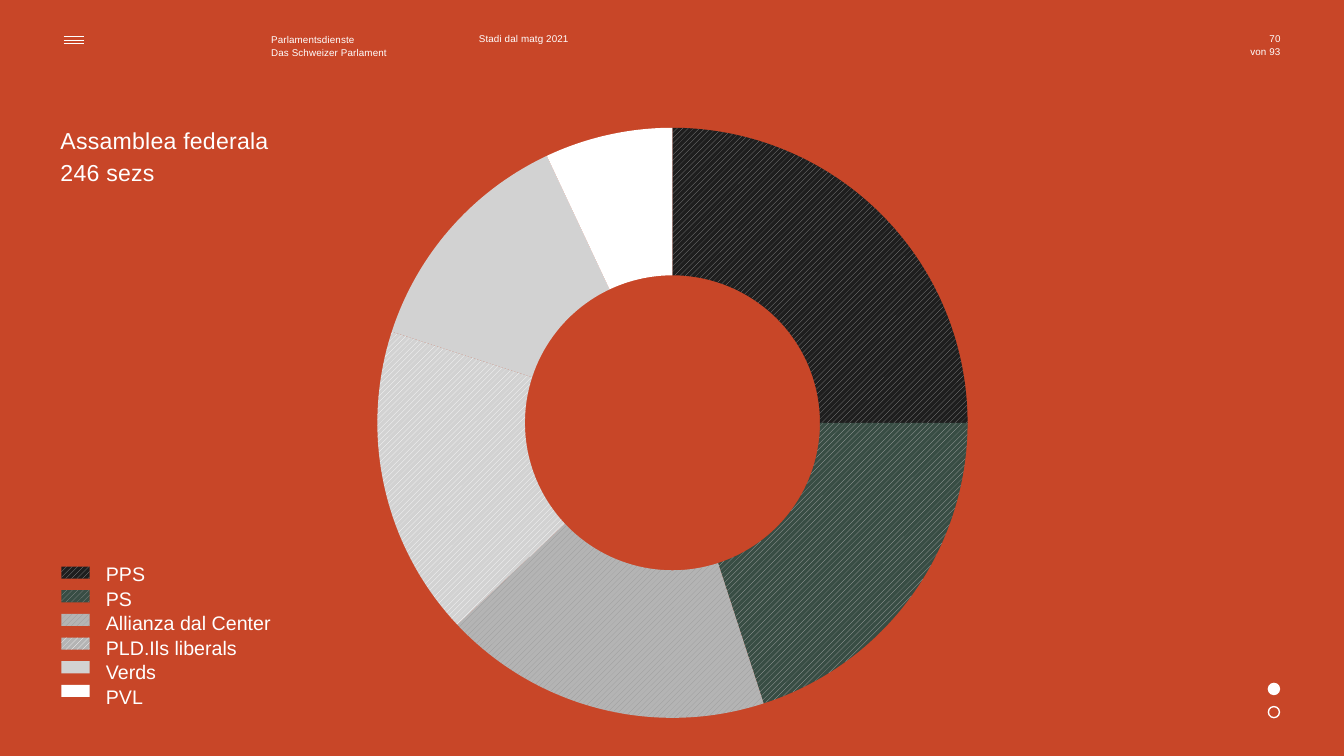
from pptx import Presentation
from pptx.chart.data import CategoryChartData
from pptx.dml.color import RGBColor
from pptx.enum.chart import XL_CHART_TYPE
from pptx.enum.dml import MSO_PATTERN
from pptx.enum.shapes import MSO_CONNECTOR, MSO_SHAPE
from pptx.enum.text import MSO_ANCHOR, MSO_AUTO_SIZE, PP_ALIGN
from pptx.oxml.ns import qn
from pptx.util import Inches, Pt
from lxml import etree

DOUGHNUT = XL_CHART_TYPE.DOUGHNUT
HATCH = MSO_PATTERN.WIDE_UPWARD_DIAGONAL
STRAIGHT = MSO_CONNECTOR.STRAIGHT
OVAL, RECTANGLE = MSO_SHAPE.OVAL, MSO_SHAPE.RECTANGLE
LEFT, RIGHT = PP_ALIGN.LEFT, PP_ALIGN.RIGHT
TOP = MSO_ANCHOR.TOP
NO_AUTOFIT = MSO_AUTO_SIZE.NONE

FONT = "Arial"
RED = RGBColor(0xC8, 0x46, 0x28)
WHITE = RGBColor(0xFF, 0xFF, 0xFF)
BLACK = RGBColor(0x00, 0x00, 0x00)
CHARCOAL = RGBColor(0x1E, 0x1E, 0x1E)
GREEN = RGBColor(0x38, 0x4D, 0x44)
DARK_GREY = RGBColor(0x96, 0x96, 0x96)
MID_GREY = RGBColor(0xB4, 0xB4, 0xB4)
LIGHT_GREY = RGBColor(0xD2, 0xD2, 0xD2)

# Party, share, (colour, hatch) in the ring, (colour, hatch) in the legend
PARTIES = [
    ("PPS", 25, (CHARCOAL, DARK_GREY), (CHARCOAL, DARK_GREY)),
    ("PS", 20, (GREEN, MID_GREY), (GREEN, DARK_GREY)),
    ("Allianza dal Center", 18, (MID_GREY, DARK_GREY), (MID_GREY, DARK_GREY)),
    ("PLD.Ils liberals", 17, (LIGHT_GREY, WHITE), (MID_GREY, WHITE)),
    ("Verds", 13, (LIGHT_GREY, None), (LIGHT_GREY, None)),
    ("PVL", 7, (WHITE, None), (WHITE, None)),
]


def paint(fill, colour, hatch):
    """Fill with a plain colour, or with diagonal hatching over it."""
    if hatch is None:
        fill.solid()
        fill.fore_color.rgb = colour
    else:
        fill.patterned()
        fill.pattern = HATCH
        fill.fore_color.rgb = hatch
        fill.back_color.rgb = colour


def write(frame, lines, size, tracking=0, align=LEFT, line_spacing=1.0):
    """Write one paragraph per line; tracking is in hundredths of a point."""
    frame.word_wrap = True
    frame.auto_size = NO_AUTOFIT
    frame.vertical_anchor = TOP
    frame.margin_left = frame.margin_right = 0
    frame.margin_top = frame.margin_bottom = 0
    for index, line in enumerate(lines):
        paragraph = frame.add_paragraph() if index else frame.paragraphs[0]
        paragraph.alignment = align
        paragraph.line_spacing = line_spacing
        paragraph.space_before = paragraph.space_after = Pt(0)
        run = paragraph.add_run()
        run.text = line
        run.font.name = FONT
        run.font.size = Pt(size)
        run.font.color.rgb = WHITE
        run._r.get_or_add_rPr().set("spc", str(tracking))


def add_label(slide, box, lines, size, **style):
    label = slide.shapes.add_textbox(*map(Inches, box))
    write(label.text_frame, lines, size, **style)


def add_menu_icon(slide, left, top, width, height):
    for row in range(3):
        y = Inches(top + row * height / 2)
        bar = slide.shapes.add_connector(
            STRAIGHT, Inches(left), y, Inches(left + width), y)
        bar.line.color.rgb = WHITE
        bar.line.width = Pt(0.4)
        etree.SubElement(bar._element.spPr, qn("a:effectLst"))


def add_header(slide, left, top, width):
    right = left + width
    add_menu_icon(slide, left, top + 0.04, 0.2, 0.07)
    add_label(slide, (left + 2.06, top, 1.3, 0.26),
              ["Parlamentsdienste", "Das Schweizer Parlament"],
              7, tracking=10, line_spacing=1.1)
    add_label(slide, (left + 4.12, top, 1.21, 0.12),
              ["Stadi dal matg 2021"], 7, tracking=10)
    for row, text in enumerate(["70", "von 93"]):
        add_label(slide, (right - 0.44, top + row * 0.13, 0.44, 0.12),
                  [text], 7, tracking=10, align=RIGHT)


def add_heading(slide, left, top, width, height):
    title = slide.shapes.title
    title.left, title.top = Inches(left), Inches(top)
    title.width, title.height = Inches(width), Inches(height)
    write(title.text_frame, ["Assamblea federala", "246 sezs"],
          16.5, tracking=20, line_spacing=1.14)


def add_seat_ring(slide, left, top, width, height):
    seats = CategoryChartData()
    seats.categories = [str(n) for n in range(1, len(PARTIES) + 1)]
    seats.add_series("Series 1", [share for _, share, _, _ in PARTIES])
    chart = slide.shapes.add_chart(
        DOUGHNUT, Inches(left), Inches(top), Inches(width), Inches(height),
        seats).chart
    chart.has_title = False
    chart.has_legend = False
    chart.font.name = FONT
    chart.font.size = Pt(10)
    chart.font.color.rgb = BLACK
    plot = chart.plots[0]
    plot.vary_by_categories = True
    plot._element.find(qn("c:holeSize")).set("val", "75")
    for index, (_, _, ring_style, _) in enumerate(PARTIES):
        segment = plot.series[0].points[index].format
        paint(segment.fill, *ring_style)
        segment.line.fill.background()


def add_legend(slide, left, top, width, height):
    pitch = height / len(PARTIES)
    for row, (_, _, _, swatch_style) in enumerate(PARTIES):
        swatch = slide.shapes.add_shape(
            RECTANGLE, Inches(left), Inches(top + 0.05 + row * pitch),
            Inches(0.28), Inches(0.12))
        swatch.shadow.inherit = False
        paint(swatch.fill, *swatch_style)
        swatch.line.fill.background()
    add_label(slide, (left + 0.44, top, width - 0.44, height),
              [party for party, _, _, _ in PARTIES], 14, line_spacing=1.04)


def add_page_dots(slide, left, top, size, pitch):
    for row, filled in enumerate([True, False]):
        dot = slide.shapes.add_shape(
            OVAL, Inches(left), Inches(top + row * pitch),
            Inches(size), Inches(size))
        dot.shadow.inherit = False
        if filled:
            paint(dot.fill, WHITE, None)
        else:
            dot.fill.background()
        dot.line.color.rgb = WHITE
        dot.line.width = Pt(1)


def main():
    deck = Presentation()
    deck.slide_width, deck.slide_height = Inches(13.33), Inches(7.5)
    slide = deck.slides.add_slide(deck.slide_layouts.get_by_name("Title Only"))
    paint(slide.background.fill, RED, None)
    add_header(slide, 0.63, 0.32, 12.07)
    add_seat_ring(slide, 2.07, 1.13, 9.2, 6.13)
    add_heading(slide, 0.6, 1.22, 5.59, 0.96)
    add_legend(slide, 0.61, 5.57, 3.45, 1.41)
    add_page_dots(slide, 12.58, 6.78, 0.11, 0.23)
    deck.save("out.pptx")


if __name__ == "__main__":
    main()
